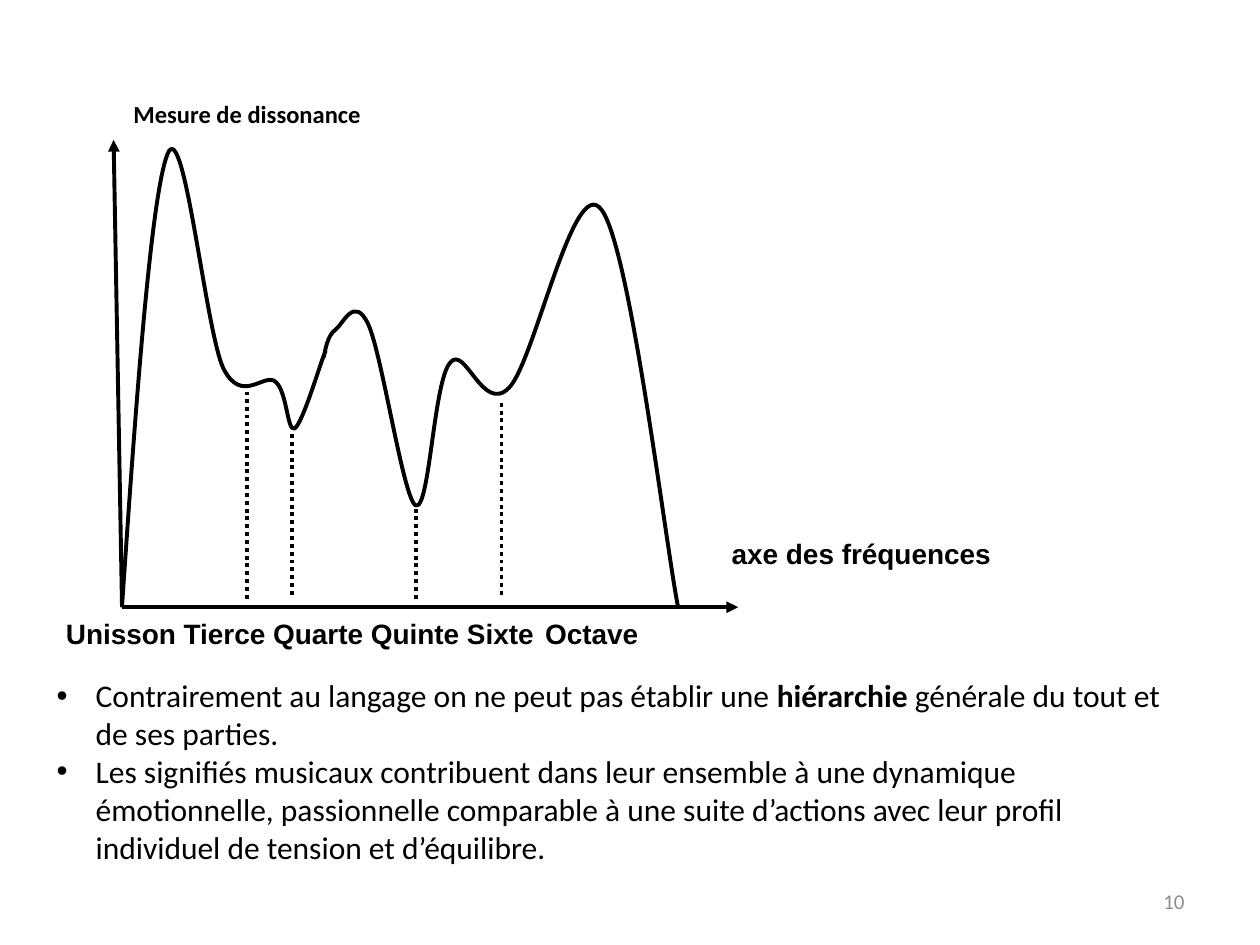
import pptx
import pptx.util
import pptx.dml.color
import pptx.enum.dml
import pptx.enum.shapes
import pptx.enum.text
import pptx.oxml
import pptx.oxml.ns
from dataclasses import dataclass
from lxml import etree

Cm, Pt = pptx.util.Cm, pptx.util.Pt
Align = pptx.enum.text.PP_ALIGN
Anchor = pptx.enum.text.MSO_ANCHOR
qn = pptx.oxml.ns.qn


@dataclass(frozen=True)
class Theme:
    ink = pptx.dml.color.RGBColor(0, 0, 0)
    grey = pptx.dml.color.RGBColor(0x8C, 0x8C, 0x8C)
    sans = "Arial"
    body = "Calibri"
    axis = Pt(16)
    title = Pt(14)
    text = Pt(18)
    page = Pt(12)
    line = Pt(2.25)


theme = Theme()
deck = pptx.Presentation()
deck.slide_width, deck.slide_height = Cm(25.4), Cm(19.05)
slide = deck.slides.add_slide(deck.slide_layouts[6])


def add_line(x1, y1, x2, y2):
    line = slide.shapes.add_connector(
        pptx.enum.shapes.MSO_CONNECTOR.STRAIGHT, Cm(x1), Cm(y1), Cm(x2), Cm(y2))
    line.line.color.rgb = theme.ink
    line.line.width = theme.line
    etree.SubElement(line._element.spPr, qn("a:effectLst"))
    return line


def add_text(box, lines, face, size, color=theme.ink, bold=False,
             align=Align.LEFT, anchor=Anchor.TOP):
    """Each line is a list of (words, bold) runs; bold None keeps the paragraph's."""
    frame = slide.shapes.add_textbox(*map(Cm, box)).text_frame
    frame.word_wrap = True
    frame.vertical_anchor = anchor
    for i, runs in enumerate(lines):
        para = frame.add_paragraph() if i else frame.paragraphs[0]
        para.alignment = align
        para.font.name, para.font.size = face, size
        para.font.color.rgb, para.font.bold = color, bold
        for words, strong in runs:
            run = para.add_run()
            run.text = words
            run.font.bold = strong
    return frame


# Axes with arrowheads
left, base = 2.46, 12.24
for x, y in [(14.88, base), (2.29, 2.82)]:
    axis = add_line(left, base, x, y)
    etree.SubElement(axis.line._get_or_add_ln(), qn("a:tailEnd"), type="triangle")

# Dissonance curve: two handles and an end point per row
curve = [
    [(2.74, 8.08), (3.05, 3.91), (3.38, 3.1)],
    [(3.71, 2.31), (4.14, 6.63), (4.5, 7.42)],
    [(4.88, 8.18), (5.33, 7.49), (5.56, 7.7)],
    [(5.79, 7.9), (5.79, 8.71), (5.94, 8.64)],
    [(6.1, 8.53), (6.43, 7.42), (6.53, 7.16)],
    [(6.63, 6.93), (6.48, 7.26), (6.53, 7.19)],
    [(6.55, 7.09), (6.6, 6.76), (6.76, 6.65)],
    [(6.91, 6.55), (7.14, 5.94), (7.42, 6.53)],
    [(7.7, 7.11), (8.13, 10.06), (8.38, 10.19)],
    [(8.66, 10.31), (8.74, 7.7), (9.07, 7.32)],
    [(9.37, 6.91), (9.73, 8.36), (10.26, 7.82)],
    [(10.77, 7.32), (11.56, 3.48), (12.12, 4.22)],
    [(12.7, 4.95), (13.41, 10.92), (13.67, base)],
]
pen = slide.shapes.build_freeform(Cm(left), Cm(base))
pen.add_line_segments([(Cm(x), Cm(y)) for row in curve for x, y in row], close=False)
wave = pen.convert_to_shape()
wave.shadow.inherit = False
wave.fill.background()
wave.line.color.rgb = theme.ink
wave.line.width = theme.line

# Turn every three straight segments into one Bézier segment
steps = list(wave._element.iter(qn("a:lnTo")))
for i in range(0, len(steps), 3):
    bend = etree.Element(qn("a:cubicBezTo"))
    steps[i].addprevious(bend)
    for step in steps[i:i + 3]:
        bend.append(step[0])
        step.getparent().remove(step)

# Dotted drops from the minima
for x, top, foot in [(4.98, 7.9, 12.07), (5.89, 8.71, 11.99),
                     (8.38, 10.26, 12.07), (10.11, 8.08, 11.99)]:
    drop = add_line(x, foot, x, top)
    drop.line.dash_style = pptx.enum.dml.MSO_LINE.ROUND_DOT

# Labels
names = add_text((0.58, 12.29, 14.96, 0.94),
                 [[("Unisson Tierce Quarte Quinte Sixte\tOctave", None)]],
                 theme.sans, theme.axis, bold=True, anchor=Anchor.MIDDLE)
props = names.paragraphs[0]._p.get_or_add_pPr()
props.set("indent", str(Cm(0.5)))
tabs = etree.Element(qn("a:tabLst"))
etree.SubElement(tabs, qn("a:tab"), pos=str(Cm(10.72)), algn="l")
props.insert(0, tabs)

add_text((14.5, 10.69, 5.92, 0.94), [[("axe des fréquences", None)]],
         theme.sans, theme.axis, bold=True)
add_text((2.44, 1.88, 5.36, 0.86), [[("Mesure de dissonance", None)]],
         theme.body, theme.title, bold=True)
add_text((18.21, 17.65, 5.92, 1.02), [[("10", None)]], theme.body, theme.page,
         theme.grey, align=Align.RIGHT, anchor=Anchor.MIDDLE)

# Bulleted remarks
notes = add_text((0.89, 13.51, 23.01, 4.11), [
    [("Contrairement au langage on ne peut pas établir une ", None),
     ("hiérarchie", True),
     (" générale du tout et de ses parties.", None)],
    [("Les signifiés musicaux contribuent dans leur ensemble à une dynamique "
      "émotionnelle, passionnelle comparable à une suite d’actions avec leur "
      "profil individuel de tension et d’équilibre.", None)],
], theme.body, theme.text)
for para in notes.paragraphs:
    props = para._p.get_or_add_pPr()
    props.set("marL", str(Cm(0.79)))
    props.set("indent", str(-Cm(0.79)))
    props.insert(0, etree.Element(qn("a:buFont"), typeface=theme.sans))
    props.insert(1, etree.Element(qn("a:buChar"), char="•"))

deck.save("out.pptx")
